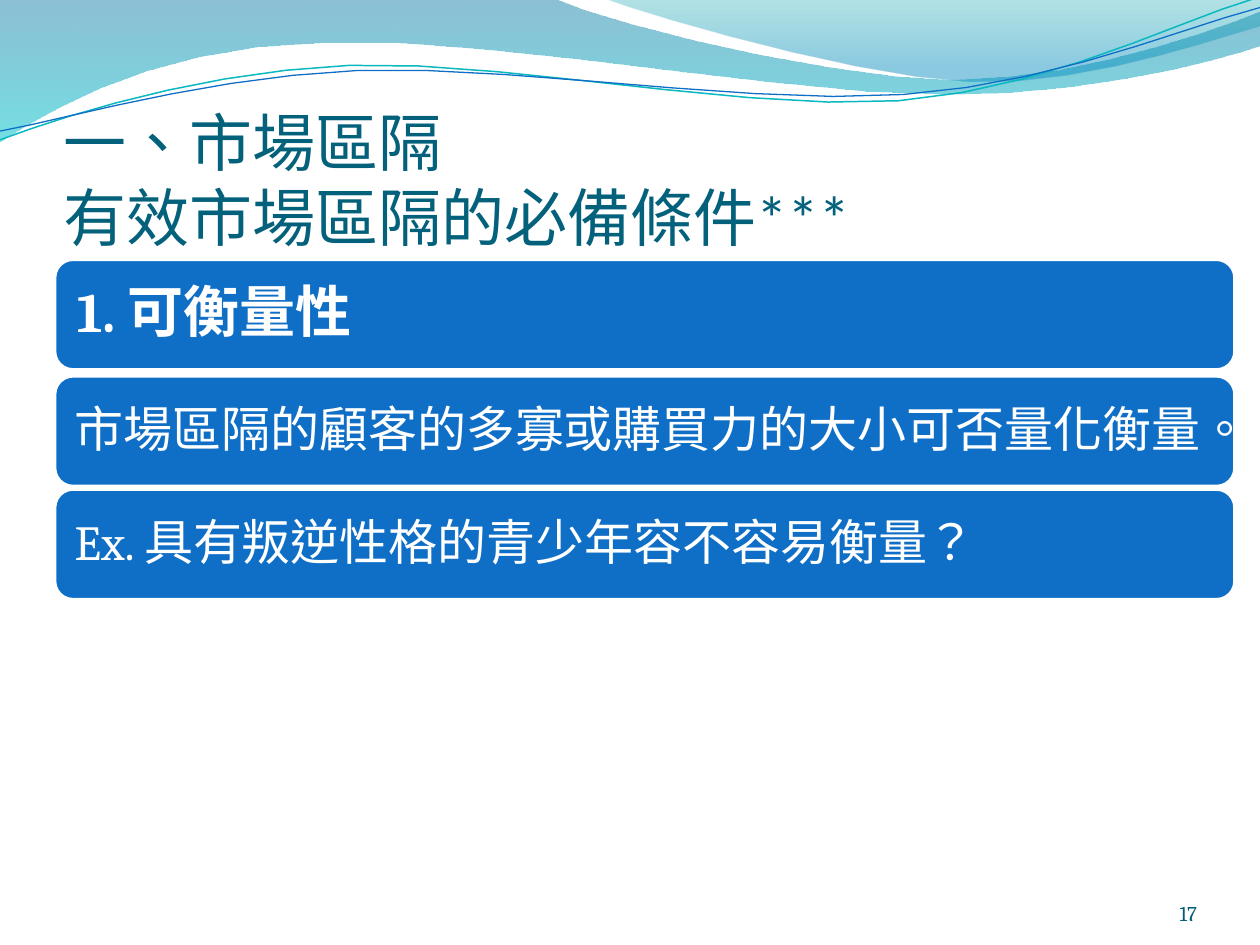
from pptx import Presentation
from pptx.dml.color import RGBColor
from pptx.enum.lang import MSO_LANGUAGE_ID as Language
from pptx.enum.shapes import MSO_SHAPE as Shape
from pptx.enum.text import MSO_ANCHOR as Anchor, MSO_AUTO_SIZE as AutoSize, PP_ALIGN as Align
from pptx.oxml.ns import qn
from pptx.util import Pt
from lxml.etree import SubElement

COLORS = {
    "title": "04617B", "number": "045D75", "card": "0F6FC6", "white": "FFFFFF",
    "deep": "0074A1", "cyan": "00C6CF", "teal": "00A1A9", "sky": "008BBF",
    "aqua line": "0AB8BF", "blue line": "0F6FC6",
}
TITLE = ["一、市場區隔", "有效市場區隔的必備條件***"]
PAGE_NUMBER = "17"
CARDS = [
    (148.2, "1. 可衡量性", 32, True),
    (214.8, "市場區隔的顧客的多寡或購買力的大小可否量化衡量。", 28, False),
    (279.5, "Ex. 具有叛逆性格的青少年容不容易衡量？", 28, False),
]
CARD_LEFT, CARD_WIDTH, CARD_HEIGHT, CARD_INSET = 31.2, 674.5, 63.2, 3.1
BANDS = [
    ([(0, 0), [(316.8, -0.7)],
      [(342.7, 12.2), (478.1, 45.4), (545.8, 45.4)],
      [(614.2, 45.4), (689.8, 18.7), (720, 6.5)],
      [(720.7, 25.9)],
      [(705.6, 31.7), (626.4, 54.7), (537.1, 54)],
      [(447.8, 54), (275, 20.2), (185, 24.5)],
      [(92.9, 25.9), (33.1, 59.8), (-0.7, 81.4)]],
     [(0, "deep", 45), (1, "cyan", 55)]),
    ([(344.9, -0.7),
      [(366.5, 7.9), (491, 44.6), (553.7, 46.8)],
      [(616.3, 49.7), (691.9, 23), (720, 15.1)],
      [(720, 0)]],
     [(0, "teal", 30), (0.8, "sky", 45)]),
]
WAVES = [
    ([(0, 79.9),
      [(34.6, 67), (113.8, 41), (199.4, 37.4)],
      [(284.4, 33.8), (427, 64.1), (513.4, 57.6)],
      [(599.8, 51.1), (675.4, 10.8), (718.6, -1.4)]],
     "aqua line", 0.85),
    ([(0, 74.9),
      [(33.8, 69.1), (118.1, 43.9), (203.8, 40.3)],
      [(290.2, 36.7), (429.8, 60.5), (516.2, 54)],
      [(601.9, 48.2), (677.5, 15.1), (720, 4.3)]],
     "blue line", 0.75),
]
CURVE_STEPS = 7


def color(name):
    return RGBColor.from_string(COLORS[name])


def trace(outline):
    points = [outline[0]]
    for segment in outline[1:]:
        if len(segment) == 1:
            points += segment
            continue
        corners = [points[-1], *segment]
        for step in range(1, CURVE_STEPS + 1):
            t = step / CURVE_STEPS
            weights = ((1 - t) ** 3, 3 * t * (1 - t) ** 2, 3 * t * t * (1 - t), t ** 3)
            points.append(tuple(sum(w * c[axis] for w, c in zip(weights, corners))
                                for axis in (0, 1)))
    return [(Pt(x), Pt(y)) for x, y in points]


def add_outline(page, outline, close):
    points = trace(outline)
    builder = page.shapes.build_freeform(*points[0])
    builder.add_line_segments(points[1:], close=close)
    shape = builder.convert_to_shape()
    shape.shadow.inherit = False
    return shape


def add_band(page, outline, stops):
    band = add_outline(page, outline, True)
    band.line.fill.background()
    band.fill.gradient()
    band.fill.gradient_angle = 270
    for stop, (position, name, _) in zip(band.fill.gradient_stops, stops):
        stop.position = position
        stop.color.rgb = color(name)
    tints = list(band._element.spPr.iter(qn("a:srgbClr")))
    for tint, (_, _, opacity) in zip(tints, stops):
        SubElement(tint, qn("a:alpha")).set("val", str(opacity * 1000))


def add_wave(page, outline, name, width):
    wave = add_outline(page, outline, False)
    wave.fill.background()
    wave.line.color.rgb = color(name)
    wave.line.width = Pt(width)


def set_frame(frame, anchor, left=0, top=0, right=0, bottom=0):
    frame.word_wrap = True
    frame.auto_size = AutoSize.NONE
    frame.vertical_anchor = anchor
    frame.margin_left, frame.margin_top = Pt(left), Pt(top)
    frame.margin_right, frame.margin_bottom = Pt(right), Pt(bottom)


def add_span(para, text, font, size, name, bold=False):
    span = para.add_run()
    span.text = text
    span.font.name, span.font.size, span.font.bold = font, Pt(size), bold
    span.font.language_id = Language.TRADITIONAL_CHINESE
    span.font.color.rgb = color(name)


def add_title(page):
    title = page.shapes.title
    title.left, title.top, title.width, title.height = Pt(36), Pt(55.5), Pt(654), Pt(90)
    set_frame(title.text_frame, Anchor.BOTTOM, top=3.6)
    para = title.text_frame.paragraphs[0]
    para.alignment = Align.LEFT
    for index, line in enumerate(TITLE):
        if index:
            para.add_line_break()
        add_span(para, line, "Calibri", 36, "title")


def add_card(page, top, text, size, bold):
    card = page.shapes.add_shape(Shape.ROUNDED_RECTANGLE, Pt(CARD_LEFT), Pt(top),
                                 Pt(CARD_WIDTH), Pt(CARD_HEIGHT))
    card.shadow.inherit = False
    card.fill.solid()
    card.fill.fore_color.rgb = color("card")
    card.line.color.rgb = color("white")
    card.line.width = Pt(2)
    box = page.shapes.add_textbox(Pt(CARD_LEFT + CARD_INSET), Pt(top + CARD_INSET),
                                  Pt(CARD_WIDTH - 2 * CARD_INSET),
                                  Pt(CARD_HEIGHT - 2 * CARD_INSET))
    set_frame(box.text_frame, Anchor.MIDDLE, *[0.3 * size] * 4)
    para = box.text_frame.paragraphs[0]
    para.alignment = Align.LEFT
    para.line_spacing = 0.9
    add_span(para, text, "Cambria", size, "white", bold)


def add_page_number(page):
    box = page.shapes.add_textbox(Pt(624), Pt(500.5), Pt(60), Pt(28.75))
    set_frame(box.text_frame, Anchor.BOTTOM)
    para = box.text_frame.paragraphs[0]
    para.alignment = Align.RIGHT
    add_span(para, PAGE_NUMBER, "Cambria", 12, "number")


def main():
    deck = Presentation()
    deck.slide_width, deck.slide_height = Pt(720), Pt(540)
    page = deck.slides.add_slide(deck.slide_layouts[5])
    for band in BANDS:
        add_band(page, *band)
    for wave in WAVES:
        add_wave(page, *wave)
    add_title(page)
    add_page_number(page)
    for card in CARDS:
        add_card(page, *card)
    deck.save("out.pptx")


if __name__ == "__main__":
    main()
